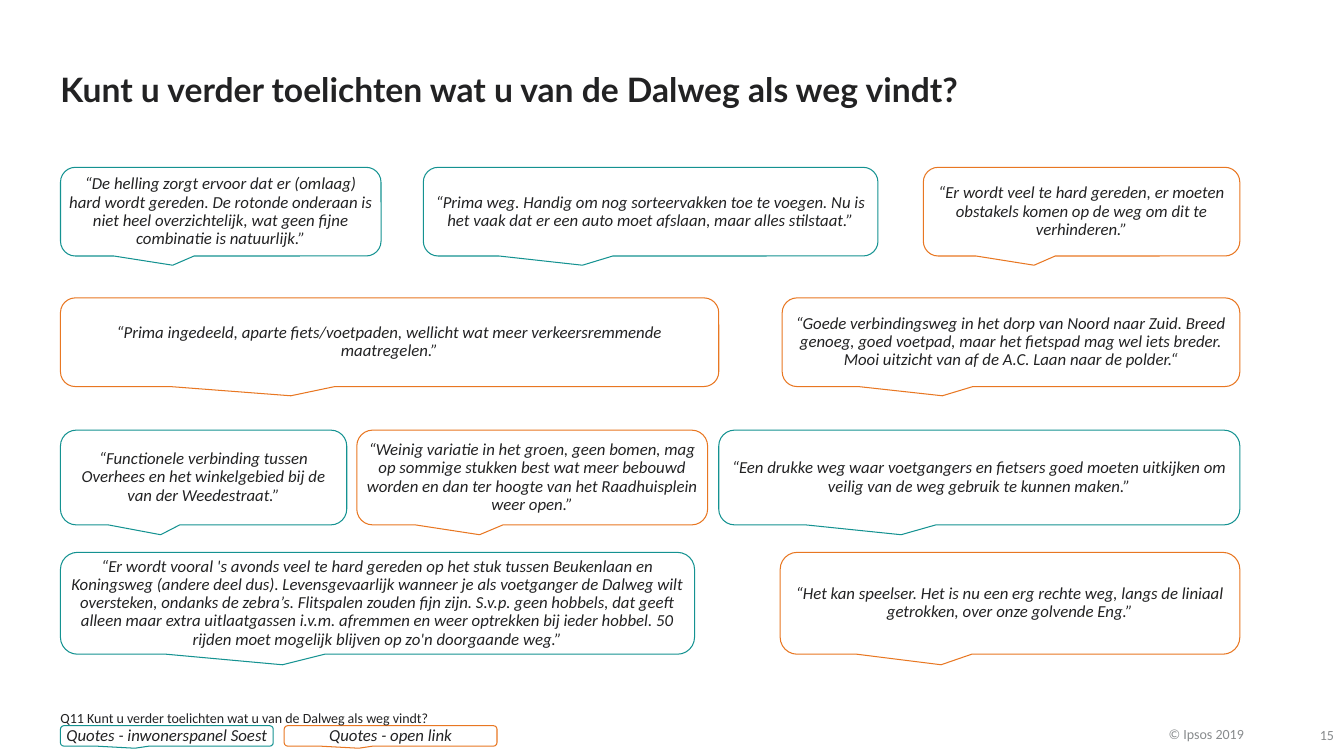
import pptx
import pptx.util
import pptx.dml.color
import pptx.enum.shapes
import pptx.enum.text

HUES = {"panel": "149291", "open": "E87722", "ink": "222223", "gray": "888B8D"}
ALIGN = pptx.enum.text.PP_ALIGN
ANCHOR = pptx.enum.text.MSO_ANCHOR
SIDES = ("margin_left", "margin_top", "margin_right", "margin_bottom")
WIDE = pptx.util.Inches(13.33)
HIGH = pptx.util.Inches(7.5)
LEFT = 4.5

TITLE = {"name": "Lato", "size": pptx.util.Pt(24), "bold": True}
QUOTE = {"name": "Calibri", "size": pptx.util.Pt(12), "italic": True}
SMALL = {"name": "Calibri", "size": pptx.util.Pt(10)}

ROWS = [
    (22.13, 11.73, [
        (LEFT, 23.85, "panel", "“De helling zorgt ervoor dat er (omlaag) hard wordt gereden. De rotonde onderaan is "
         "niet heel overzichtelijk, wat geen fijne combinatie is natuurlijk.”"),
        (31.5, 33.83, "panel", "“Prima weg. Handig om nog sorteervakken toe te voegen. Nu is het vaak dat er een "
         "auto moet afslaan, maar alles stilstaat.”"),
        (68.7, 23.55, "open", "“Er wordt veel te hard gereden, er moeten obstakels komen op de weg om dit te "
         "verhinderen.”"),
    ]),
    (39.4, 11.73, [
        (LEFT, 48.98, "open", "“Prima ingedeeld, aparte fiets/voetpaden, wellicht wat meer verkeersremmende "
         "maatregelen.”"),
        (58.2, 34.05, "open", "“Goede verbindingsweg in het dorp van Noord naar Zuid. Breed genoeg, goed voetpad, "
         "maar het fietspad mag wel iets breder. Mooi uitzicht van af de A.C. Laan naar de polder.“"),
    ]),
    (56.9, 12.53, [
        (LEFT, 21.3, "panel", "“Functionele verbinding tussen Overhees en het winkelgebied bij de van der "
         "Weedestraat.”"),
        (26.55, 26.1, "open", "“Weinig variatie in het groen, geen bomen, mag op sommige stukken best wat meer "
         "bebouwd worden en dan ter hoogte van het Raadhuisplein weer open.”"),
        (53.48, 38.77, "panel", "“Een drukke weg waar voetgangers en fietsers goed moeten uitkijken om veilig van "
         "de weg gebruik te kunnen maken.”"),
    ]),
    (73.07, 13.47, [
        (LEFT, 47.18, "panel", "“Er wordt vooral 's avonds veel te hard gereden op het stuk tussen Beukenlaan en "
         "Koningsweg (andere deel dus). Levensgevaarlijk wanneer je als voetganger de Dalweg wilt oversteken, "
         "ondanks de zebra’s. Flitspalen zouden fijn zijn. S.v.p. geen hobbels, dat geeft alleen maar extra "
         "uitlaatgassen i.v.m. afremmen en weer optrekken bij ieder hobbel. 50 rijden moet mogelijk blijven op "
         "zo'n doorgaande weg.”"),
        (58.05, 34.2, "open", "“Het kan speelser. Het is nu een erg rechte weg, langs de liniaal getrokken, over "
         "onze golvende Eng.”"),
    ]),
    (96, 2.7, [
        (LEFT, 15.83, "panel", "Quotes - inwonerspanel Soest"),
        (21.15, 15.83, "open", "Quotes - open link"),
    ]),
]


def area(x, y, w, h):
    """Turn percentages of the slide into a box in EMU."""
    return [int(part * full / 100) for part, full in zip((x, y, w, h), (WIDE, HIGH) * 2)]


def color(name):
    """Return the named color."""
    return pptx.dml.color.RGBColor.from_string(HUES[name])


def write(shape, text, font, hue="ink", align=ALIGN.LEFT, anchor=ANCHOR.BOTTOM, pad=0, space=1.0):
    """Put one formatted paragraph into a shape."""
    frame = shape.text_frame
    look = dict.fromkeys(SIDES, pptx.util.Inches(pad))
    look.update(word_wrap=True, auto_size=pptx.enum.text.MSO_AUTO_SIZE.NONE, vertical_anchor=anchor)
    for key, value in look.items():
        setattr(frame, key, value)
    line = frame.paragraphs[0]
    line.text = text
    line.alignment = align
    line.line_spacing = space
    for key, value in font.items():
        setattr(line.font, key, value)
    line.font.color.rgb = color(hue)


def head(slide, box):
    """Place the title."""
    title = slide.shapes.title
    for key, value in zip(("left", "top", "width", "height"), box):
        setattr(title, key, value)
    write(title, "Kunt u verder toelichten wat u van de Dalweg als weg vindt?", TITLE,
          anchor=ANCHOR.TOP, space=0.9)


def bubble(slide, box, hue, text):
    """Draw one quote in an outlined callout."""
    kind = pptx.enum.shapes.MSO_SHAPE.ROUNDED_RECTANGULAR_CALLOUT
    shape = slide.shapes.add_shape(kind, *box)
    for spot, value in enumerate((-0.15, 0.604, 0.167)):
        shape.adjustments[spot] = value
    shape.shadow.inherit = False
    shape.fill.background()
    shape.line.color.rgb = color(hue)
    shape.line.width = pptx.util.Pt(0.75)
    write(shape, text, QUOTE, align=ALIGN.CENTER, anchor=ANCHOR.MIDDLE, pad=0.04, space=0.9)


def label(slide, box, text, **look):
    """Add one small line of text."""
    write(slide.shapes.add_textbox(*box), text, SMALL, **look)


def main():
    """Build and save the slide."""
    deck = pptx.Presentation()
    deck.slide_width, deck.slide_height = WIDE, HIGH
    slide = deck.slides.add_slide(deck.slide_layouts[5])
    head(slide, area(LEFT, 9.73, 89, 4.93))
    for top, high, quotes in ROWS:
        for left, wide, hue, text in quotes:
            bubble(slide, area(left, top, wide, high), hue, text)
    label(slide, area(LEFT, 93.87, 88.2, 2.27), "Q11 Kunt u verder toelichten wat u van de Dalweg als weg vindt?")
    foot = {"hue": "gray", "align": ALIGN.RIGHT, "space": 0.85}
    label(slide, area(85.35, 94.93, 7.2, 3.33), "© Ipsos 2019", **foot)
    label(slide, area(95.85, 93.6, 3.4, 4.67), "15", **foot)
    deck.save("out.pptx")


if __name__ == "__main__":
    main()
